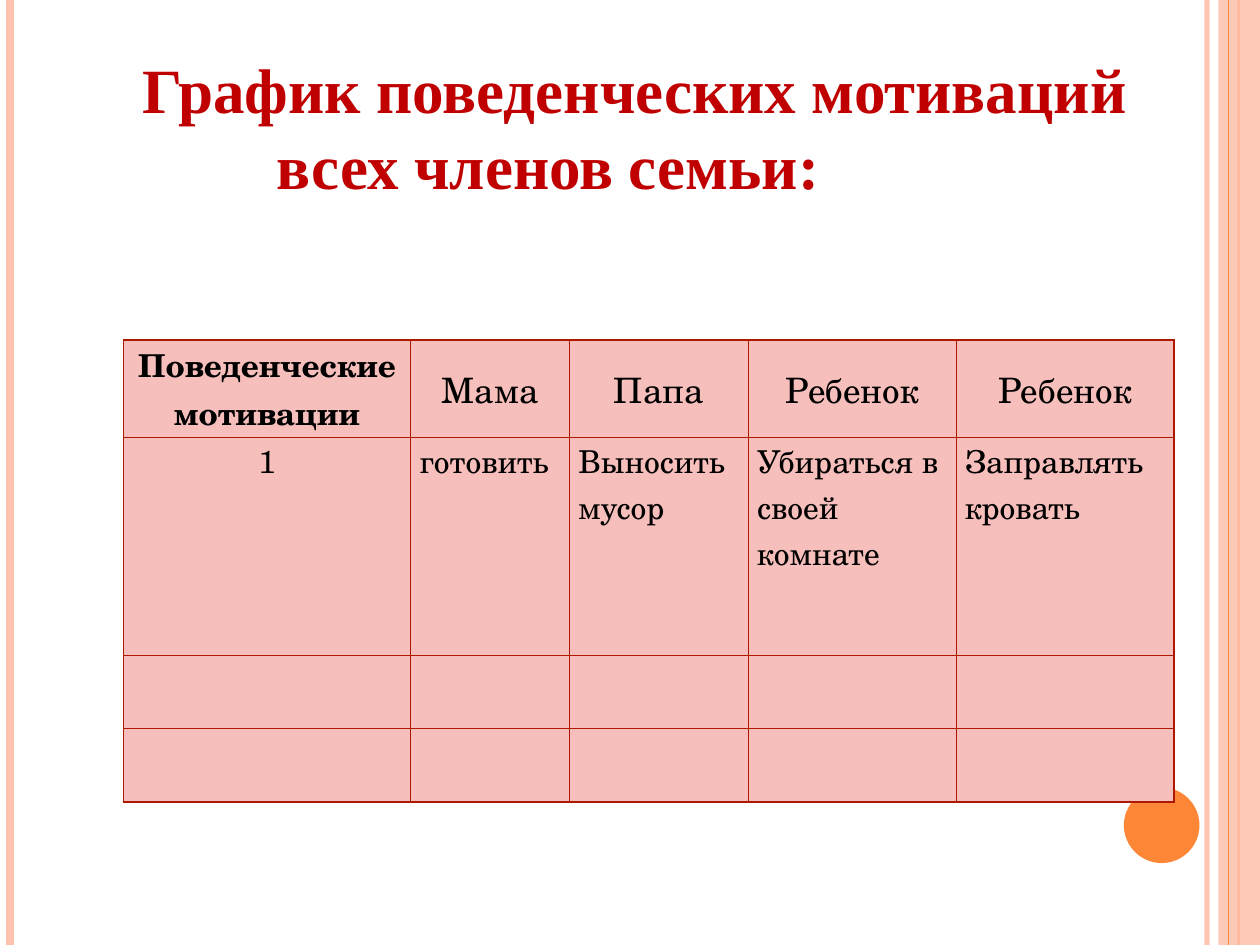
from lxml.etree import SubElement
from pptx import Presentation
from pptx.dml.color import RGBColor
from pptx.enum.shapes import MSO_CONNECTOR, MSO_SHAPE
from pptx.enum.text import MSO_ANCHOR, PP_ALIGN
from pptx.oxml.ns import qn
from pptx.util import Inches, Pt

TITLE = "График поведенческих мотиваций всех членов семьи:"
HEADERS = ["Поведенческие мотивации", "Мама", "Папа", "Ребенок", "Ребенок"]
TASKS = ["1", "готовить", "Выносить мусор", "Убираться в своей комнате", "Заправлять кровать"]
ROWS = [HEADERS, TASKS, [""] * 5, [""] * 5]
COLUMN_WIDTHS = [2.28, 1.26, 1.42, 1.65, 1.73]
ROW_HEIGHTS = [0.77, 1.73, 0.58, 0.58]

PEACH = RGBColor(0xFE, 0xC3, 0xAE)
ORANGE = RGBColor(0xFE, 0x86, 0x37)
PINK = RGBColor(0xF7, 0xBF, 0xBC)
BRICK = RGBColor(0xAC, 0x18, 0x00)
RED = RGBColor(0xC0, 0x00, 0x00)
BLACK = RGBColor(0, 0, 0)
TABLE_FONT = "TeX Gyre Schola"
WIDTH, HEIGHT = 10, 7.5


def set_opacity(element, percent):
    color = next(element.iter(qn("a:srgbClr")))
    SubElement(color, qn("a:alpha"), val=str(percent * 1000))


def add_stripe(page, x, color, weight, opacity=100):
    stripe = page.shapes.add_connector(
        MSO_CONNECTOR.STRAIGHT, Inches(x), 0, Inches(x), Inches(HEIGHT))
    stripe.line.color.rgb = color
    stripe.line.width = Pt(weight)
    properties = stripe._element.spPr
    if opacity < 100:
        set_opacity(properties, opacity)
    SubElement(properties, qn("a:effectLst"))


def add_panel(page, kind, box, color, opacity=100):
    panel = page.shapes.add_shape(kind, *map(Inches, box))
    panel.shadow.inherit = False
    panel.fill.solid()
    panel.fill.fore_color.rgb = color
    panel.line.fill.background()
    if opacity < 100:
        set_opacity(panel._element.spPr, opacity)


def write(frame, text, *, font, size, color, bold=False, align=PP_ALIGN.LEFT):
    paragraph = frame.paragraphs[0]
    paragraph.alignment = align
    paragraph.font.size = Pt(size)
    if text:
        span = paragraph.add_run()
        span.text = text
        span.font.name = font
        span.font.size = Pt(size)
        span.font.bold = bold
        span.font.color.rgb = color
    return paragraph


def add_borders(cell):
    properties = cell._tc.get_or_add_tcPr()
    for position, side in enumerate(("lnL", "lnR", "lnT", "lnB")):
        border = properties.makeelement(qn(f"a:{side}"), {"w": str(Pt(1))})
        fill = SubElement(border, qn("a:solidFill"))
        SubElement(fill, qn("a:srgbClr"), val=str(BRICK))
        properties.insert(position, border)


def add_title(page):
    box = page.shapes.add_textbox(*map(Inches, (0.67, 0.3, 8.74, 2.29)))
    frame = box.text_frame
    frame.word_wrap = True
    frame.margin_top = Inches(0.1)
    paragraph = write(frame, TITLE, font="Times New Roman", size=36, color=RED, bold=True)
    # A hanging indent sets the second line further right than the first.
    properties = paragraph._p.get_or_add_pPr()
    properties.set("marL", str(Inches(1.43)))
    properties.set("indent", str(Inches(-1.07)))


def add_schedule(page):
    table = page.shapes.add_table(
        len(ROWS), len(HEADERS), Inches(0.98), Inches(2.7),
        Inches(sum(COLUMN_WIDTHS)), Inches(sum(ROW_HEIGHTS))).table
    for column, width in zip(table.columns, COLUMN_WIDTHS):
        column.width = Inches(width)
    for row, height in zip(table.rows, ROW_HEIGHTS):
        row.height = Inches(height)
    for r, texts in enumerate(ROWS):
        for c, text in enumerate(texts):
            cell = table.cell(r, c)
            cell.margin_left = cell.margin_right = Inches(0.07)
            cell.margin_top = cell.margin_bottom = 0
            cell.vertical_anchor = MSO_ANCHOR.MIDDLE if r == 0 else MSO_ANCHOR.TOP
            cell.fill.solid()
            cell.fill.fore_color.rgb = PINK
            add_borders(cell)
            write(cell.text_frame, text, font=TABLE_FONT, color=BLACK,
                  size=20 if r == 0 and c > 0 else 18,
                  bold=r == 0 and c == 0,
                  align=PP_ALIGN.CENTER if r == 0 or c == 0 else PP_ALIGN.LEFT)


def main():
    deck = Presentation()
    deck.slide_width, deck.slide_height = Inches(WIDTH), Inches(HEIGHT)
    page = deck.slides.add_slide(deck.slide_layouts[6])
    add_stripe(page, 9.58, PEACH, 3, opacity=93)
    add_stripe(page, 0.08, PEACH, 4.5)
    add_stripe(page, 9.83, ORANGE, 1.5)
    add_panel(page, MSO_SHAPE.RECTANGLE, (9.67, 0, 0.33, HEIGHT), PEACH, opacity=87)
    add_stripe(page, 9.75, ORANGE, 0.75)
    add_panel(page, MSO_SHAPE.OVAL, (8.92, 6.25, 0.6, 0.6), ORANGE)
    add_schedule(page)
    add_title(page)
    deck.save("out.pptx")


if __name__ == "__main__":
    main()
